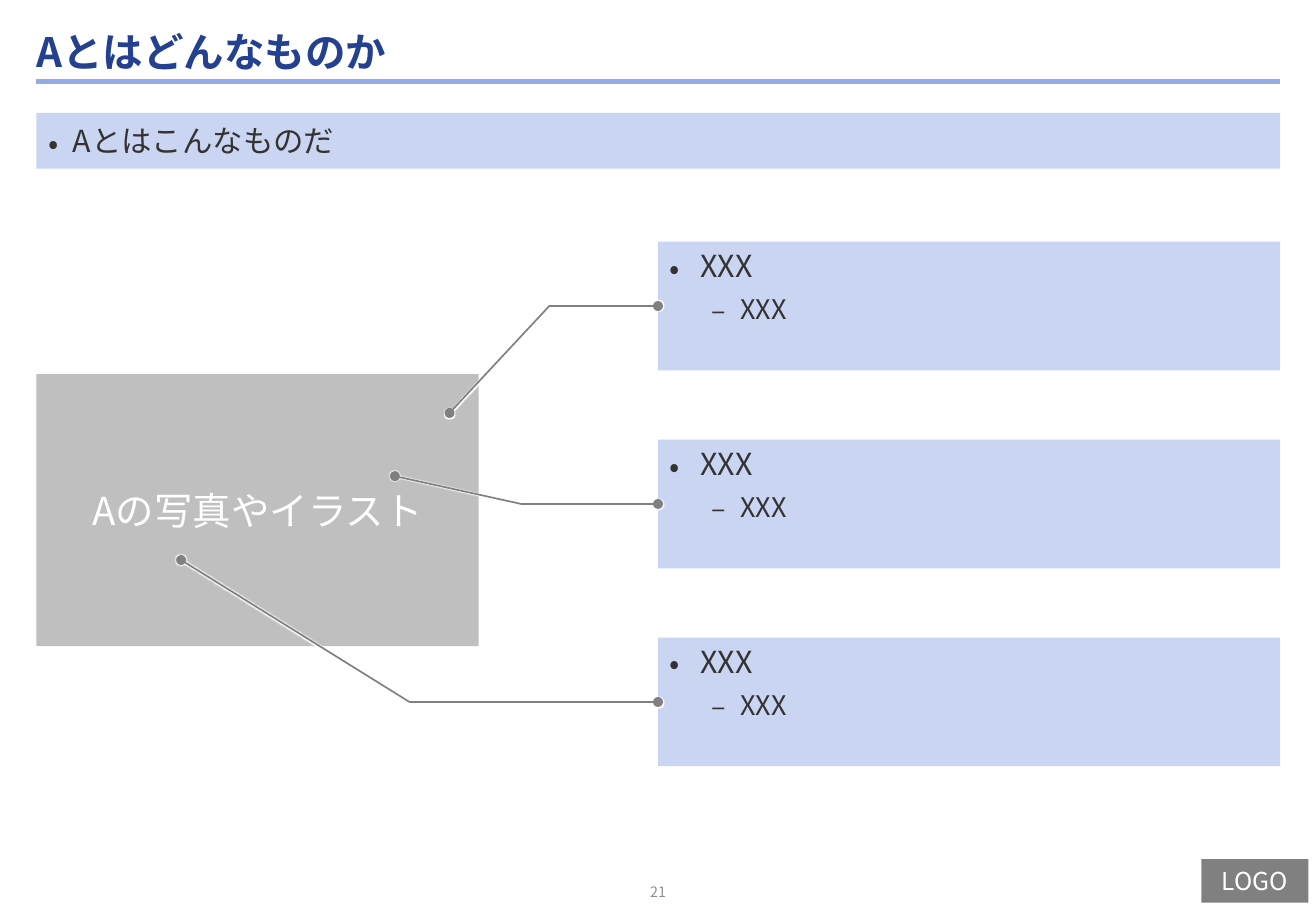
import dataclasses
import typing

import lxml.etree
import pptx
import pptx.dml.color
import pptx.enum.shapes
import pptx.enum.text
import pptx.oxml.ns
import pptx.util

FONT = "Noto Sans CJK JP"
NAVY, RULE_BLUE, PALE_BLUE = "244190", "95ABE5", "CAD5F2"
INK, GRAY, PAGE_GRAY, PHOTO_GRAY, WHITE = "333333", "808080", "909090", "BFBFBF", "FFFFFF"
ANCHOR = pptx.enum.text.MSO_ANCHOR
ALIGN = pptx.enum.text.PP_ALIGN
RECTANGLE = pptx.enum.shapes.MSO_SHAPE.RECTANGLE
LEFT, FULL_WIDTH = 2.77, 94.5
CARD_LEFT, CARD_WIDTH = 50, 47.27
CARD_TOP, CARD_HEIGHT, CARD_PITCH = 26.53, 14.13, 21.73

deck = pptx.Presentation()
deck.slide_width = pptx.util.Inches(10.83)
deck.slide_height = pptx.util.Inches(7.5)
slide = deck.slides.add_slide(deck.slide_layouts[5])


@dataclasses.dataclass(frozen=True)
class Area:
    left: float
    top: float
    width: float
    height: float


@dataclasses.dataclass(frozen=True)
class Line:
    text: str
    size: float
    color: str
    bullet: str = ""
    margin: float = 0
    hanging: float = 0
    level: int = 0
    bold: bool = False
    paragraph: dict[str, typing.Any] = dataclasses.field(default_factory=dict)


@dataclasses.dataclass(frozen=True)
class Callout:
    target: tuple[float, float]
    bend: float
    row: int


def across(share: float) -> int:
    return round(deck.slide_width * share / 100)


def down(share: float) -> int:
    return round(deck.slide_height * share / 100)


def rgb(color: str) -> pptx.dml.color.RGBColor:
    return pptx.dml.color.RGBColor.from_string(color)


def assign(target: typing.Any, values: dict[str, typing.Any]) -> None:
    for name, value in values.items():
        setattr(target, name, value)


def child(parent: typing.Any, tag: str, **attributes: str) -> typing.Any:
    return lxml.etree.SubElement(parent, pptx.oxml.ns.qn(tag), attributes)


def place(shape: typing.Any, area: Area) -> None:
    assign(shape, {"left": across(area.left), "top": down(area.top),
                   "width": across(area.width), "height": down(area.height)})


def write(shape: typing.Any, lines: list[Line], anchor: typing.Any = ANCHOR.MIDDLE,
          insets: tuple[float, float, float, float] = (0.1, 0.05, 0.1, 0.05)) -> None:
    frame = shape.text_frame
    sides = ("margin_left", "margin_top", "margin_right", "margin_bottom")
    assign(frame, {"word_wrap": True, "vertical_anchor": anchor,
                   "auto_size": pptx.enum.text.MSO_AUTO_SIZE.NONE})
    assign(frame, {side: pptx.util.Inches(inset) for side, inset in zip(sides, insets)})
    for index, line in enumerate(lines):
        paragraph = frame.add_paragraph() if index else frame.paragraphs[0]
        assign(paragraph, {"alignment": ALIGN.LEFT, "level": line.level} | line.paragraph)
        run = paragraph.add_run()
        run.text = line.text
        run.font.color.rgb = rgb(line.color)
        assign(run.font, {"name": FONT, "size": pptx.util.Pt(line.size), "bold": line.bold})
        child(run.font._element, "a:ea", typeface=FONT)
        if line.bullet:
            properties = paragraph._p.get_or_add_pPr()
            properties.set("marL", str(pptx.util.Inches(line.margin)))
            properties.set("indent", str(pptx.util.Inches(-line.hanging)))
            child(properties, "a:buFont", typeface=FONT)
            child(properties, "a:buChar", char=line.bullet)


def add_panel(area: Area, color: str) -> typing.Any:
    panel = slide.shapes.add_shape(RECTANGLE, 0, 0, 0, 0)
    place(panel, area)
    panel.shadow.inherit = False
    panel.fill.solid()
    panel.fill.fore_color.rgb = rgb(color)
    panel.line.fill.background()
    return panel


def add_callout(callout: Callout) -> None:
    level = CARD_TOP + CARD_PITCH * callout.row + CARD_HEIGHT / 2
    start, *rest = [(across(x), down(y)) for x, y in
                    (callout.target, (callout.bend, level), (CARD_LEFT, level))]
    builder = slide.shapes.build_freeform(*start, scale=1.0)
    builder.add_line_segments(rest, close=False)
    leader = builder.convert_to_shape()
    leader.fill.background()
    leader.line.color.rgb = rgb(GRAY)
    leader.line.width = pptx.util.Pt(1)
    for end in ("a:headEnd", "a:tailEnd"):
        child(leader.line._ln, end, type="oval")
    leader.shadow.inherit = False
    effects = leader._element.spPr.find(pptx.oxml.ns.qn("a:effectLst"))
    glow = child(effects, "a:glow", rad=str(pptx.util.Pt(1)))
    child(glow, "a:srgbClr", val=WHITE)


def add_rule() -> None:
    rule = slide.shapes.add_connector(pptx.enum.shapes.MSO_CONNECTOR.STRAIGHT, across(LEFT),
                                      down(8.93), across(LEFT + FULL_WIDTH), down(8.93))
    rule.line.color.rgb = rgb(RULE_BLUE)
    rule.line.width = pptx.util.Pt(3)
    child(rule._element.spPr, "a:effectLst")


def main() -> None:
    centered = {"alignment": ALIGN.CENTER}
    before_main = {"space_before": pptx.util.Pt(10)}
    before_detail = {"space_before": pptx.util.Pt(5)}

    title = slide.shapes.title
    place(title, Area(LEFT, 3.33, FULL_WIDTH, 5.2))
    write(title, [Line("Aとはどんなものか", 24, NAVY, bold=True, paragraph={"line_spacing": 0.9})],
          insets=(0, 0, 0.1, 0))
    add_rule()

    logo = add_panel(Area(91.3, 94.3, 8.13, 4.8), GRAY)
    write(logo, [Line("LOGO", 14.6, WHITE, paragraph=centered)])

    page_number = slide.shapes.add_textbox(0, 0, 0, 0)
    place(page_number, Area(47.09, 96.53, 5.82, 2.8))
    write(page_number, [Line("21", 8.5, PAGE_GRAY, paragraph=centered)], insets=(0, 0, 0, 0))

    summary = add_panel(Area(LEFT, 12.4, FULL_WIDTH, 6.13), PALE_BLUE)
    write(summary, [Line("Aとはこんなものだ", 18, INK, "•", 0.2, 0.2, paragraph=before_main)],
          insets=(0.1, 0.1, 0.1, 0.1))

    photo = add_panel(Area(LEFT, 41.07, 33.61, 29.87), PHOTO_GRAY)
    write(photo, [Line("Aの写真やイラスト", 22.8, WHITE, paragraph=centered)])

    points = [Line("XXX", 18, INK, "•", 0.25, 0.25, paragraph=before_main),
              Line("XXX", 16, INK, "–", 0.58, 0.24, level=1, paragraph=before_detail)]
    callouts = [Callout((34.16, 45.33), 41.74, 0),
                Callout((30.01, 52.27), 39.61, 1),
                Callout((13.76, 61.47), 31.12, 2)]
    for callout in callouts:
        card = add_panel(Area(CARD_LEFT, CARD_TOP + CARD_PITCH * callout.row,
                              CARD_WIDTH, CARD_HEIGHT), PALE_BLUE)
        write(card, points, ANCHOR.TOP)
        add_callout(callout)

    deck.save("out.pptx")


if __name__ == "__main__":
    main()
